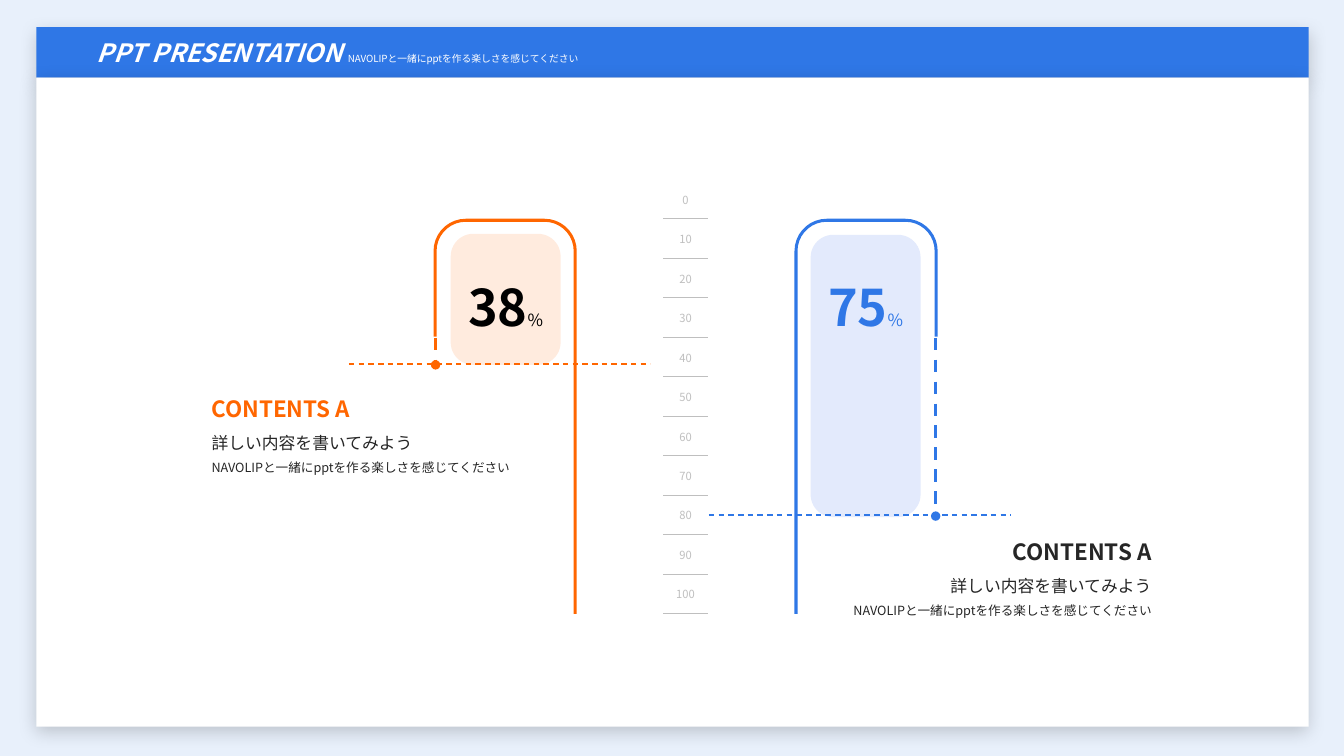
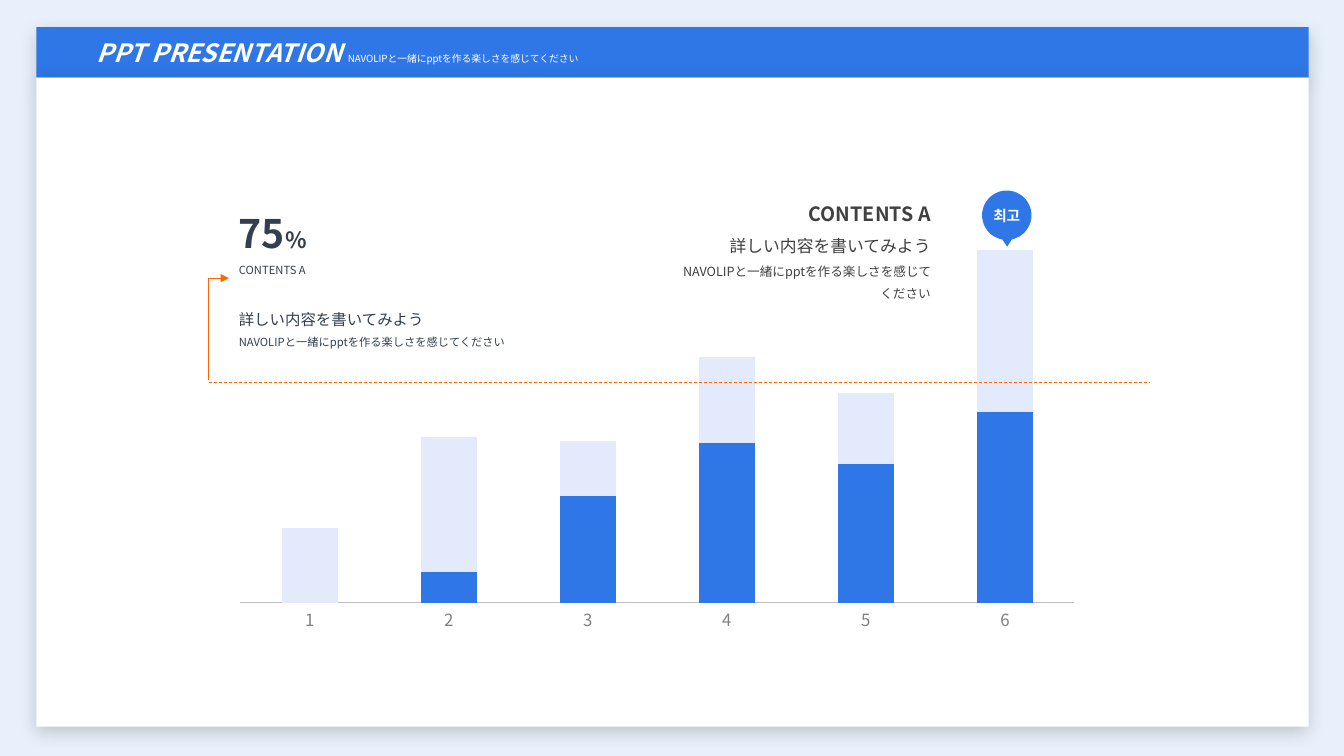
from math import cos, radians, sin

from lxml.etree import SubElement
from pptx import Presentation
from pptx.chart.data import CategoryChartData
from pptx.dml.color import RGBColor
from pptx.enum.chart import XL_CHART_TYPE as CHART, XL_TICK_MARK as TICK
from pptx.enum.dml import MSO_LINE as DASH
from pptx.enum.shapes import MSO_CONNECTOR as CONN, MSO_SHAPE as SHAPE
from pptx.enum.text import MSO_ANCHOR as ANCHOR, MSO_AUTO_SIZE as AUTO, PP_ALIGN as ALIGN
from pptx.oxml.ns import qn
from pptx.util import Inches, Pt

FONT = "Noto Sans CJK KR"
COLORS = {
    "back": "E8F0FB", "white": "FFFFFF", "black": "000000",
    "blue": "2F77E6", "pale": "E3EAFC", "orange": "FF6600",
    "ink": "262626", "dark": "404040", "navy": "333F50",
    "rule": "BFBFBF", "label": "808080",
}
DETAIL = "詳しい内容を書いてみよう"
NOTE = "NAVOLIPと一緒にpptを作る楽しさを感じてください"


def rgb(name):
    return RGBColor.from_string(COLORS[name])


def child(parent, tag, **attrs):
    return SubElement(parent, qn(tag), {k: str(v) for k, v in attrs.items()})


def arc(x, y, radius, start, stop):
    step = 10 if stop > start else -10
    angles = [radians(a) for a in range(start, stop + step, step)]
    return [(x + radius * cos(a), y - radius * sin(a)) for a in angles]


class Deck:
    """Holds the shared style and the current slide."""

    def __init__(self):
        self.prs = Presentation()
        self.prs.slide_width = Inches(13.33)
        self.prs.slide_height = Inches(7.5)

    def new_slide(self):
        self.s = self.prs.slides.add_slide(self.prs.slide_layouts[6])
        self.s.background.fill.solid()
        self.s.background.fill.fore_color.rgb = rgb("back")
        band = self.shape(SHAPE.RECTANGLE, (0.36, 0.27, 12.62, 0.5), "blue", shadow=True)
        tf = band.text_frame
        tf.vertical_anchor = ANCHOR.MIDDLE
        p = tf.paragraphs[0]
        self.runs(p, [("PPT PRESENTATION ", 18, "white", True), (NOTE, 7, "white", False)], ALIGN.LEFT)
        p.runs[0].font.italic = True
        p.level = 1
        p._p.get_or_add_pPr().set("marL", str(Inches(0.5)))
        self.shape(SHAPE.RECTANGLE, (0.36, 0.77, 12.62, 6.44), "white", shadow=True)

    def paint(self, sp, color, shadow=False):
        sp.fill.solid()
        sp.fill.fore_color.rgb = rgb(color)
        sp.line.fill.background()
        sp.shadow.inherit = False
        if shadow:
            effects = sp._element.spPr.find(qn("a:effectLst"))
            outer = child(effects, "a:outerShdw", blurRad=Pt(13), dist=Pt(4),
                          dir=5400000, algn="t", rotWithShape=0)
            child(child(outer, "a:srgbClr", val=COLORS["black"]), "a:alpha", val=19000)

    def shape(self, kind, at, color, adjust=(), alpha=None, shadow=False):
        sp = self.s.shapes.add_shape(kind, *map(Inches, at))
        for i, value in enumerate(adjust):
            sp.adjustments[i] = value
        self.paint(sp, color, shadow)
        if alpha:
            clr = sp._element.spPr.find(qn("a:solidFill")).find(qn("a:srgbClr"))
            child(clr, "a:alpha", val=alpha * 1000)
        return sp

    def runs(self, p, parts, align):
        p.alignment = align
        for text, size, color, bold in parts:
            r = p.add_run()
            r.text = text
            r.font.size = Pt(size)
            r.font.bold = bold
            r.font.color.rgb = rgb(color)
            r.font.name = FONT
            child(r.font._element, "a:ea", typeface=FONT)

    def text(self, at, paragraphs, align=ALIGN.LEFT):
        tf = self.s.shapes.add_textbox(*map(Inches, at)).text_frame
        tf.word_wrap = True
        tf.auto_size = AUTO.SHAPE_TO_FIT_TEXT
        for i, parts in enumerate(paragraphs):
            p = tf.add_paragraph() if i else tf.paragraphs[0]
            self.runs(p, parts, align)
            p.line_spacing = 1.5
        return tf

    def caption(self, at, head_color, color, size=16, align=ALIGN.LEFT):
        self.text(at, [[("CONTENTS A", size, head_color, True)],
                       [(DETAIL, 12, color, False)],
                       [(NOTE, 9, color, False)]], align)

    def line(self, start, end, color, width, dash=True, tail=None, kind=CONN.STRAIGHT):
        cx = self.s.shapes.add_connector(kind, *map(Inches, start + end))
        cx.line.color.rgb = rgb(color)
        cx.line.width = Pt(width)
        if dash:
            cx.line.dash_style = DASH.DASH
        spPr = cx._element.spPr
        if tail:
            child(spPr.find(qn("a:ln")), "a:tailEnd", type=tail)
        child(spPr, "a:effectLst")
        return cx

    def corner_arrow(self, start, end, color, width):
        dx, dy = end[0] - start[0], start[1] - end[1]
        mx, my = (start[0] + end[0]) / 2, (start[1] + end[1]) / 2
        cx = self.line((mx + dy / 2, my + dx / 2), (mx - dy / 2, my - dx / 2),
                       color, width, False, "triangle", CONN.ELBOW)
        spPr = cx._element.spPr
        spPr.find(qn("a:xfrm")).set("rot", "5400000")
        spPr.find(qn("a:prstGeom")).set("prst", "bentConnector2")

    def hook(self, x, side, color):
        near, far, y, inner, outer = 0.32, 1.1, 2.49, 0.29, 0.32
        points = [(0, 6.09), (0.03, 6.09),
                  *arc(near, y, inner, 180, 90), *arc(far, y, inner, 90, 0),
                  (1.39, 3.34), (1.42, 3.34),
                  *arc(far, y, outer, 0, 90), *arc(near, y, outer, 90, 180)]
        points = [(Inches(x + side * px), Inches(py)) for px, py in points]
        fb = self.s.shapes.build_freeform(*points[0], scale=1.0)
        fb.add_line_segments(points[1:], close=True)
        self.paint(fb.convert_to_shape(), color)

    def gauge(self, number, x, side, box, color, number_color, pale, alpha, dash_end):
        self.shape(SHAPE.ROUNDED_RECTANGLE, box, pale, (0.205,), alpha)
        self.hook(x, side, color)
        self.text((box[0], 2.39, 1.09, 0.89),
                  [[(number, 36, number_color, True), ("%", 12, number_color, False)]], ALIGN.CENTER)
        post = x + side * 1.4
        self.line((post, 3.35), (post, dash_end), color, 2.25, tail="oval")

    def scale(self, at, labels):
        frame = self.s.shapes.add_table(len(labels), 1, *map(Inches, at))
        table = frame.table
        table.first_row = table.horz_banding = False
        style = next(frame._element.iter(qn("a:tableStyleId")))
        style.text = "{2D5ABB26-0587-4C30-8999-92F81FD0307C}"
        for row, label in zip(table.rows, labels):
            cell = row.cells[0]
            cell.vertical_anchor = ANCHOR.MIDDLE
            self.runs(cell.text_frame.paragraphs[0], [(label, 8, "rule", False)], ALIGN.CENTER)
            tcPr = cell._tc.get_or_add_tcPr()
            ln = child(tcPr, "a:lnB", w=Pt(1))
            child(child(ln, "a:solidFill"), "a:srgbClr", val=COLORS["rule"])
            cell.fill.background()

    def columns(self, at, cats, series):
        data = CategoryChartData()
        data.categories = cats
        for name, values, _ in series:
            data.add_series(name, values)
        chart = self.s.shapes.add_chart(CHART.COLUMN_STACKED, *map(Inches, at), data).chart
        chart.has_legend = chart.has_title = False
        chart.font.size = Pt(10)
        chart.font.name = FONT
        plot = chart.plots[0]
        plot.gap_width, plot.overlap, plot.vary_by_categories = 150, 100, False
        for ser, (_, _, color) in zip(plot.series, series):
            ser.format.fill.solid()
            ser.format.fill.fore_color.rgb = rgb(color)
        val = chart.value_axis
        val.minimum_scale, val.maximum_scale = 0, 200
        val.has_major_gridlines = val.visible = False
        cat = chart.category_axis
        cat.major_tick_mark = cat.minor_tick_mark = TICK.NONE
        cat.format.line.color.rgb = rgb("rule")
        cat.format.line.width = Pt(0.75)
        font = cat.tick_labels.font
        font.size, font.name = Pt(12), FONT
        font.color.rgb = rgb("label")
        area = next(chart._chartSpace.iter(qn("c:plotArea")))
        for old in area.findall(qn("c:layout")):
            area.remove(old)
        layout = child(area, "c:layout")
        area.insert(0, layout)
        manual = child(layout, "c:manualLayout")
        for tag, value in (("layoutTarget", "inner"), ("xMode", "edge"), ("yMode", "edge"),
                           ("x", 0.02), ("y", 0.12), ("w", 0.96), ("h", 0.8)):
            child(manual, "c:" + tag, val=value)


def gauges_slide(deck):
    deck.new_slide()
    deck.gauge("75", 7.88, 1, (8.04, 2.33, 1.09, 2.8), "blue", "blue", "pale", None, 5.12)
    deck.caption((7.88, 5.16, 3.64, 1.04), "ink", "ink", align=ALIGN.RIGHT)
    deck.scale((6.58, 1.78, 0.44, 4.31), [str(n) for n in range(0, 101, 10)])
    deck.line((7.03, 5.11), (10.03, 5.11), "blue", 1)
    deck.gauge("38", 5.72, -1, (4.47, 2.32, 1.09, 1.3), "orange", "black", "orange", 13, 3.62)
    deck.caption((2, 3.74, 3.64, 1.04), "orange", "ink")
    deck.line((3.46, 3.61), (6.45, 3.61), "orange", 1)


def columns_slide(deck):
    deck.new_slide()
    deck.columns((2.21, 1.63, 8.62, 4.73), ["1", "2", "3", "4", "5", "6"],
                 [("Series 1", (0, 16, 56, 84, 73, 100), "blue"),
                  ("Series 2", (39, 71, 29, 45, 37, 85), "pale")])
    tf = deck.text((2.27, 2.03, 3.35, 1.46),
                   [[("75", 28, "navy", True), ("%", 16, "navy", True)],
                    [("CONTENTS A", 8, "navy", False)],
                    [(DETAIL, 11, "navy", False)],
                    [(NOTE, 8, "navy", False)]])
    tf.paragraphs[0].line_spacing = 1.0
    tf.paragraphs[2].space_before = Pt(17)
    deck.line((2.07, 3.79), (11.4, 3.79), "orange", 0.5)
    deck.corner_arrow((2.07, 3.77), (2.27, 2.76), "orange", 0.5)
    badge = deck.shape(SHAPE.OVAL_CALLOUT, (9.74, 1.89, 0.49, 0.49), "blue", (0.009, 0.637))
    tf = badge.text_frame
    tf.margin_left = tf.margin_right = 0
    tf.vertical_anchor = ANCHOR.MIDDLE
    deck.runs(tf.paragraphs[0], [("최고", 10.5, "white", True)], ALIGN.CENTER)
    deck.caption((6.67, 1.84, 2.66, 1.21), "dark", "dark", 14, ALIGN.RIGHT)


def main():
    deck = Deck()
    gauges_slide(deck)
    columns_slide(deck)
    deck.prs.save("out.pptx")


if __name__ == "__main__":
    main()
